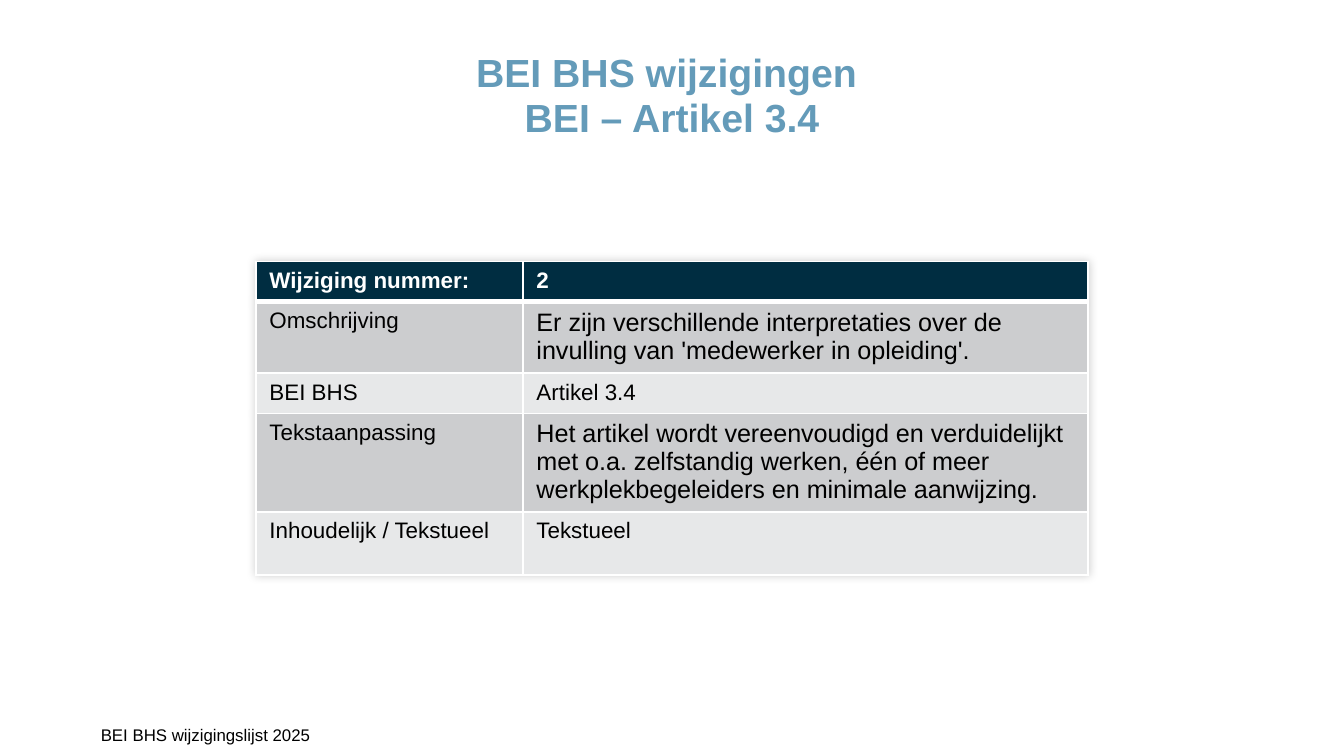
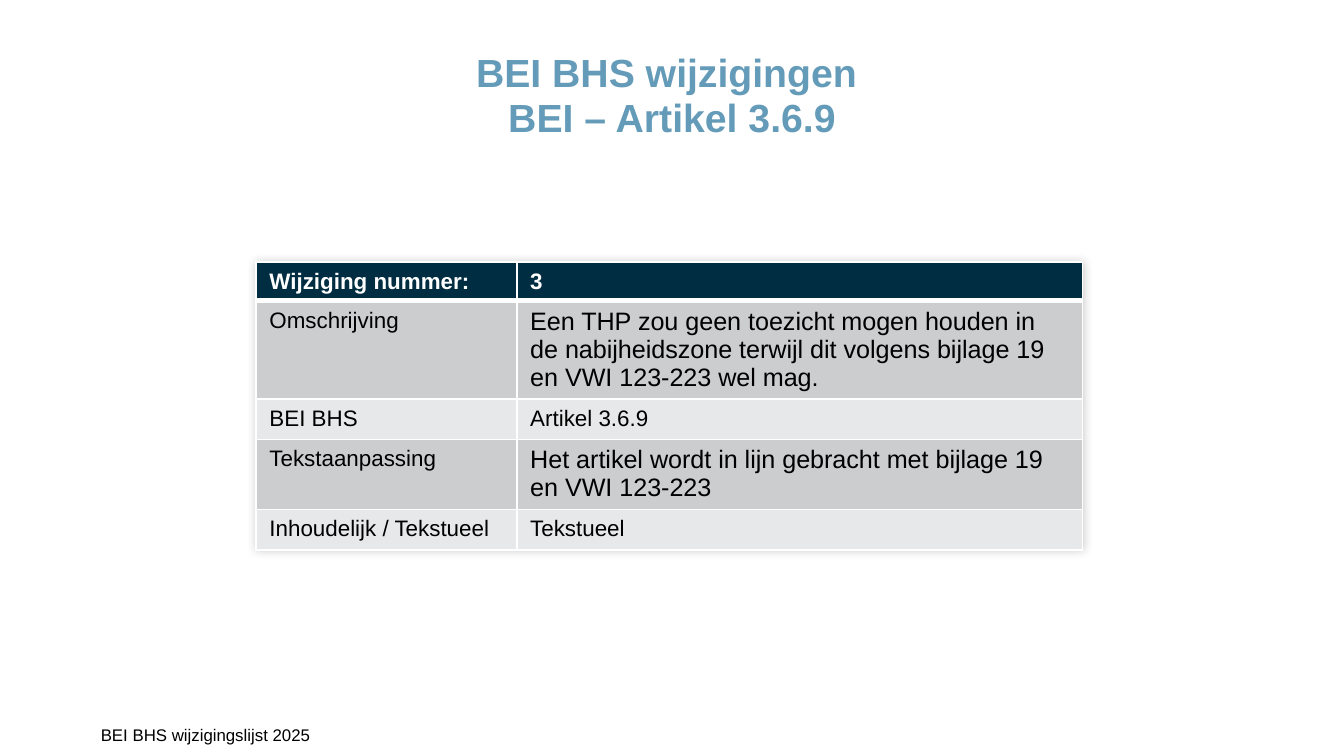
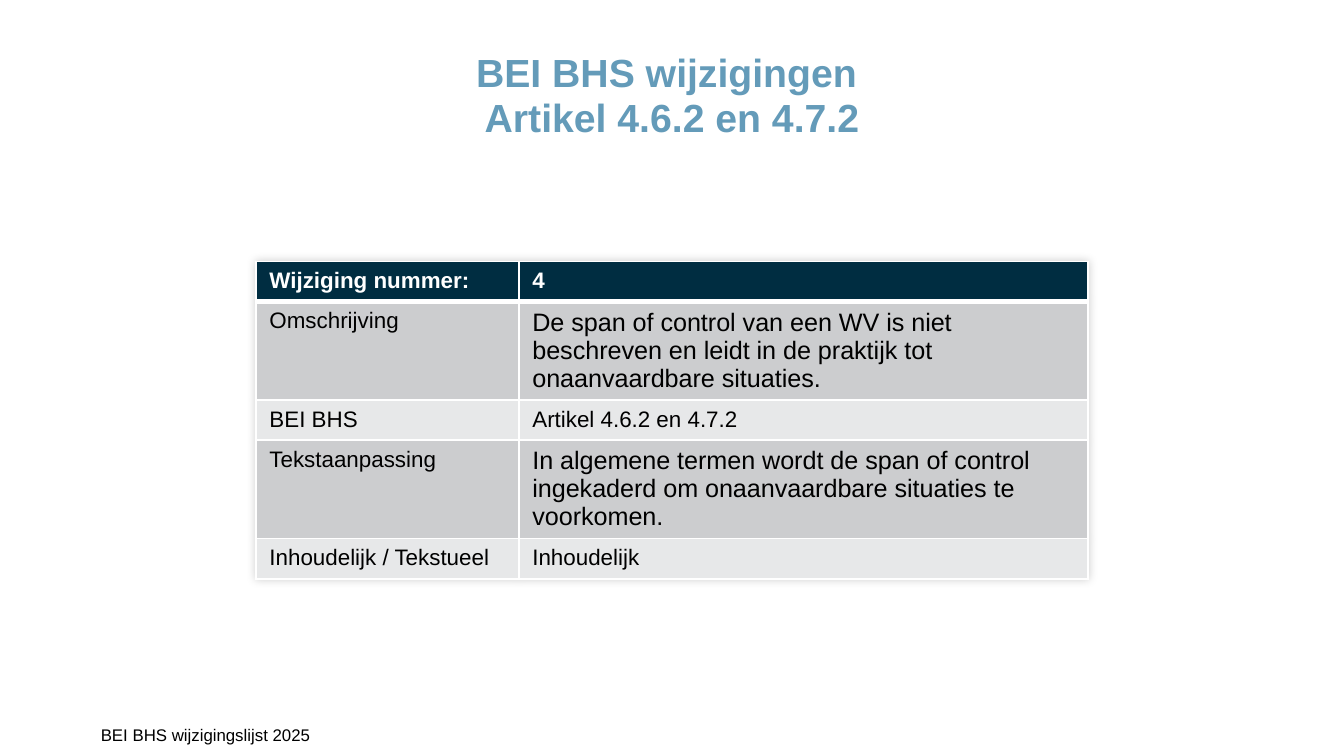
from dataclasses import dataclass

from lxml import etree
from pptx import Presentation
from pptx import util as u
from pptx.dml.color import RGBColor
from pptx.enum import text
from pptx.oxml import ns

SLIDE_WIDTH = u.Inches(10)
SLIDE_HEIGHT = u.Emu(SLIDE_WIDTH * 9 // 16)
FONT = "Arial"
TITLE_BLUE = RGBColor(0x64, 0x9B, 0xB9)
NAVY = RGBColor(0x00, 0x2D, 0x41)
DARK_BAND = RGBColor(0xCC, 0xCD, 0xCF)
LIGHT_BAND = RGBColor(0xE7, 0xE8, 0xE9)
WHITE = RGBColor(0xFF, 0xFF, 0xFF)
BLACK = RGBColor(0x00, 0x00, 0x00)

# Boxes as percentages of the slide: left, top, width, height
TITLE_BOX = (19.05, 6.9, 61.9, 16.7)
FOOTER_BOX = (0, 95.9, 47.2, 4.2)
FOOTER_INDENT = u.Inches(0.75)
FOOTER_TEXT = "BEI BHS wijzigingslijst 2025"
LABELS = ("Wijziging nummer:", "Omschrijving", "BEI BHS",
          "Tekstaanpassing", "Inhoudelijk / Tekstueel")
LONG_TEXT_ROWS = (1, 3)


@dataclass
class Change:
    heading: str
    values: tuple
    table_box: tuple
    label_percent: float  # label column's part of the table width
    row_weights: tuple  # relative row heights


CHANGES = (
    Change("BEI – Artikel 3.4",
           ("2",
            "Er zijn verschillende interpretaties over de invulling van "
            "'medewerker in opleiding'.",
            "Artikel 3.4",
            "Het artikel wordt vereenvoudigd en verduidelijkt met o.a. zelfstandig "
            "werken, één of meer werkplekbegeleiders en minimale aanwijzing.",
            "Tekstueel"),
           (19.05, 34.58, 61.9, 41.5), 32.1, (30, 53, 30, 73, 47)),
    Change("BEI – Artikel 3.6.9",
           ("3",
            "Een THP zou geen toezicht mogen houden in de nabijheidszone terwijl "
            "dit volgens bijlage 19 en VWI 123-223 wel mag.",
            "Artikel 3.6.9",
            "Het artikel wordt in lijn gebracht met bijlage 19 en VWI 123-223",
            "Tekstueel"),
           (19.05, 34.65, 61.5, 38.1), 31.55, (29, 73, 30, 52, 30)),
    Change("Artikel 4.6.2 en 4.7.2",
           ("4",
            "De span of control van een WV is niet beschreven en leidt in de "
            "praktijk tot onaanvaardbare situaties.",
            "Artikel 4.6.2 en 4.7.2",
            "In algemene termen wordt de span of control ingekaderd om "
            "onaanvaardbare situaties te voorkomen.",
            "Inhoudelijk"),
           (19.05, 34.58, 61.9, 42), 31.6, (30, 73, 30, 73, 30)),
)


def place(box):
    """Turn percentages of the slide into lengths."""
    sides = (SLIDE_WIDTH, SLIDE_HEIGHT) * 2
    return [u.Emu(round(part * side / 100)) for part, side in zip(box, sides)]


def format_text(frame, size, color, bold=False):
    for paragraph in frame.paragraphs:
        for run in paragraph.runs:
            font = run.font
            font.name, font.size, font.bold = FONT, u.Pt(size), bold
            font.color.rgb = color


def reset_frame(frame):
    frame.margin_left = frame.margin_right = 0
    frame.margin_top = frame.margin_bottom = 0
    frame.word_wrap = True
    frame.auto_size = text.MSO_AUTO_SIZE.NONE
    frame.vertical_anchor = text.MSO_ANCHOR.TOP


def set_borders(cell, top, bottom):
    properties = cell._tc.get_or_add_tcPr()
    for position, (side, points) in enumerate(
            (("L", 1), ("R", 1), ("T", top), ("B", bottom))):
        line = etree.Element(ns.qn(f"a:ln{side}"), w=str(u.Pt(points)))
        fill = etree.SubElement(line, ns.qn("a:solidFill"))
        etree.SubElement(fill, ns.qn("a:srgbClr"), val=str(WHITE))
        properties.insert(position, line)


def add_table_shadow(table):
    effects = etree.Element(ns.qn("a:effectLst"))
    shadow = etree.SubElement(effects, ns.qn("a:outerShdw"),
                              blurRad=str(u.Pt(5)), dist="0", dir="0")
    color = etree.SubElement(shadow, ns.qn("a:srgbClr"), val=str(BLACK))
    etree.SubElement(color, ns.qn("a:alpha"), val="20000")
    table._tbl.tblPr.insert(0, effects)


def add_title(slide, heading):
    title = slide.shapes.title
    title.left, title.top, title.width, title.height = place(TITLE_BOX)
    frame = title.text_frame
    reset_frame(frame)
    paragraph = frame.paragraphs[0]
    paragraph.text = f"BEI BHS wijzigingen \v{heading}"
    paragraph.alignment = text.PP_ALIGN.CENTER
    paragraph.line_spacing = 0.95
    format_text(frame, 21, TITLE_BLUE, bold=True)


def add_change_table(slide, change):
    left, top, width, height = place(change.table_box)
    table = slide.shapes.add_table(len(LABELS), 2, left, top, width, height).table
    add_table_shadow(table)

    # Grid
    label_width = round(width * change.label_percent / 100)
    table.columns[0].width = label_width
    table.columns[1].width = width - label_width
    for row, weight in zip(table.rows, change.row_weights):
        row.height = round(height * weight / sum(change.row_weights))

    # Header row, then alternating bands
    for row, contents in enumerate(zip(LABELS, change.values)):
        header = row == 0
        band = NAVY if header else DARK_BAND if row % 2 else LIGHT_BAND
        for column, content in enumerate(contents):
            cell = table.cell(row, column)
            cell.text_frame.text = content
            size = 13.5 if column == 1 and row in LONG_TEXT_ROWS else 12
            format_text(cell.text_frame, size, WHITE if header else BLACK, header)
            cell.fill.solid()
            cell.fill.fore_color.rgb = band
            set_borders(cell, top=3 if row == 1 else 1, bottom=3 if header else 1)


def add_footer(slide):
    frame = slide.shapes.add_textbox(*place(FOOTER_BOX)).text_frame
    reset_frame(frame)
    frame.margin_left = FOOTER_INDENT
    frame.text = FOOTER_TEXT
    format_text(frame, 9, BLACK)


def add_change_slide(presentation, change):
    slide = presentation.slides.add_slide(presentation.slide_layouts[5])
    add_title(slide, change.heading)
    add_change_table(slide, change)
    add_footer(slide)


def main():
    presentation = Presentation()
    presentation.slide_width, presentation.slide_height = SLIDE_WIDTH, SLIDE_HEIGHT
    for change in CHANGES:
        add_change_slide(presentation, change)
    presentation.save("out.pptx")


if __name__ == "__main__":
    main()
